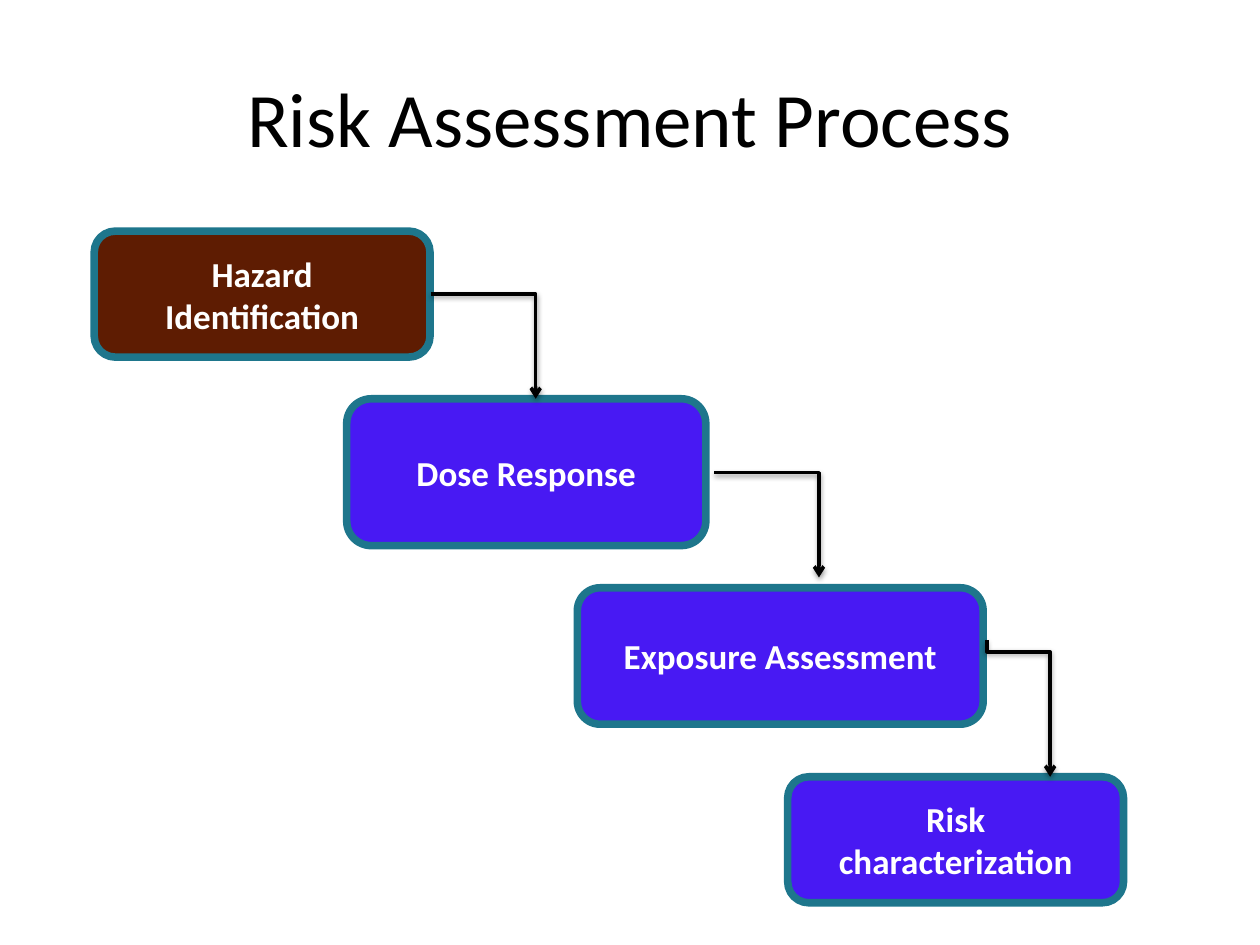
from lxml.etree import SubElement
from pptx import Presentation
from pptx.dml.color import RGBColor
from pptx.enum.shapes import MSO_CONNECTOR, MSO_SHAPE
from pptx.enum.text import MSO_ANCHOR, PP_ALIGN
from pptx.oxml.ns import qn
from pptx.util import Cm, Pt

STEPS = [
    ("Hazard Identification", "5E1C02", (1.9, 4.66, 6.77, 2.54)),
    ("Dose Response", "4819F3", (6.99, 8.04, 7.24, 2.96)),
    ("Exposure Assessment", "4819F3", (11.64, 11.85, 8.18, 2.75)),
    ("Risk characterization", "4819F3", (15.88, 15.66, 6.77, 2.54)),
]
ARROWS = [
    ((8.68, 5.93), (10.8, 8.04), None),
    ((14.4, 9.53), (16.51, 11.64), None),
    ((19.9, 12.91), (21.17, 15.66), 0.084),
]


def color(value):
    """Turn a hex string into a colour."""
    return RGBColor.from_string(value)


def write(shape, text, size, ink, bold=False):
    """Put centred text in a shape."""
    frame = shape.text_frame
    frame.word_wrap = True
    frame.vertical_anchor = MSO_ANCHOR.MIDDLE
    frame.text = text
    para = frame.paragraphs[0]
    para.alignment = PP_ALIGN.CENTER
    font = para.runs[0].font
    font.name, font.size, font.bold = "Calibri", Pt(size), bold
    font.color.rgb = color(ink)


def add_title(page, text, box):
    """Add the slide title in the given box."""
    title = page.shapes.add_textbox(*map(Cm, box))
    write(title, text, 44, "000000")


def add_step(page, text, fill, box):
    """Add one rounded step of the process."""
    step = page.shapes.add_shape(MSO_SHAPE.ROUNDED_RECTANGLE, *map(Cm, box))
    step.shadow.inherit = False
    step.adjustments[0] = 0.167
    step.fill.solid()
    step.fill.fore_color.rgb = color(fill)
    step.line.color.rgb = color("1E768C")
    step.line.width = Pt(4.33)
    write(step, text, 20, "FFFFFF", bold=True)


def add_shadow(properties):
    """Give a connector a soft shadow below it."""
    effects = SubElement(properties, qn("a:effectLst"))
    shadow = SubElement(effects, qn("a:outerShdw"), blurRad=str(Pt(3.1)),
                        dist=str(Pt(1.6)), dir="5400000", rotWithShape="0")
    black = SubElement(shadow, qn("a:srgbClr"), val="000000")
    SubElement(black, qn("a:alpha"), val="38000")


def turn_upright(arrow, drop):
    """Make an elbow leave downwards, bending after a share of its height."""
    left, top, width, height = arrow.left, arrow.top, arrow.width, arrow.height
    arrow.left = left + (width - height) // 2
    arrow.top = top + (height - width) // 2
    arrow.width, arrow.height = height, width
    frame = arrow._element.spPr.find(qn("a:xfrm"))
    frame.set("rot", "16200000")
    frame.set("flipH", "1")
    guides = arrow._element.spPr.find(qn("a:prstGeom")).get_or_add_avLst()
    SubElement(guides, qn("a:gd"), name="adj1", fmla=f"val {round(drop * 100000)}")


def add_arrow(page, start, end, drop):
    """Add an elbow arrow between two points."""
    arrow = page.shapes.add_connector(MSO_CONNECTOR.ELBOW, *map(Cm, start + end))
    arrow.line.color.rgb = color("000000")
    arrow.line.width = Pt(2)
    properties = arrow._element.spPr
    SubElement(properties.find(qn("a:ln")), qn("a:tailEnd"), type="arrow")
    add_shadow(properties)
    if drop is None:
        properties.find(qn("a:prstGeom")).set("prst", "bentConnector2")
    else:
        turn_upright(arrow, drop)


def main():
    """Build the slide and save it."""
    deck = Presentation()
    deck.slide_width, deck.slide_height = Cm(25.4), Cm(19.05)
    page = deck.slides.add_slide(deck.slide_layouts[6])
    add_title(page, "Risk Assessment Process", (1.27, 0.76, 22.86, 3.18))
    for step in STEPS:
        add_step(page, *step)
    for arrow in ARROWS:
        add_arrow(page, *arrow)
    deck.save("out.pptx")


if __name__ == "__main__":
    main()
